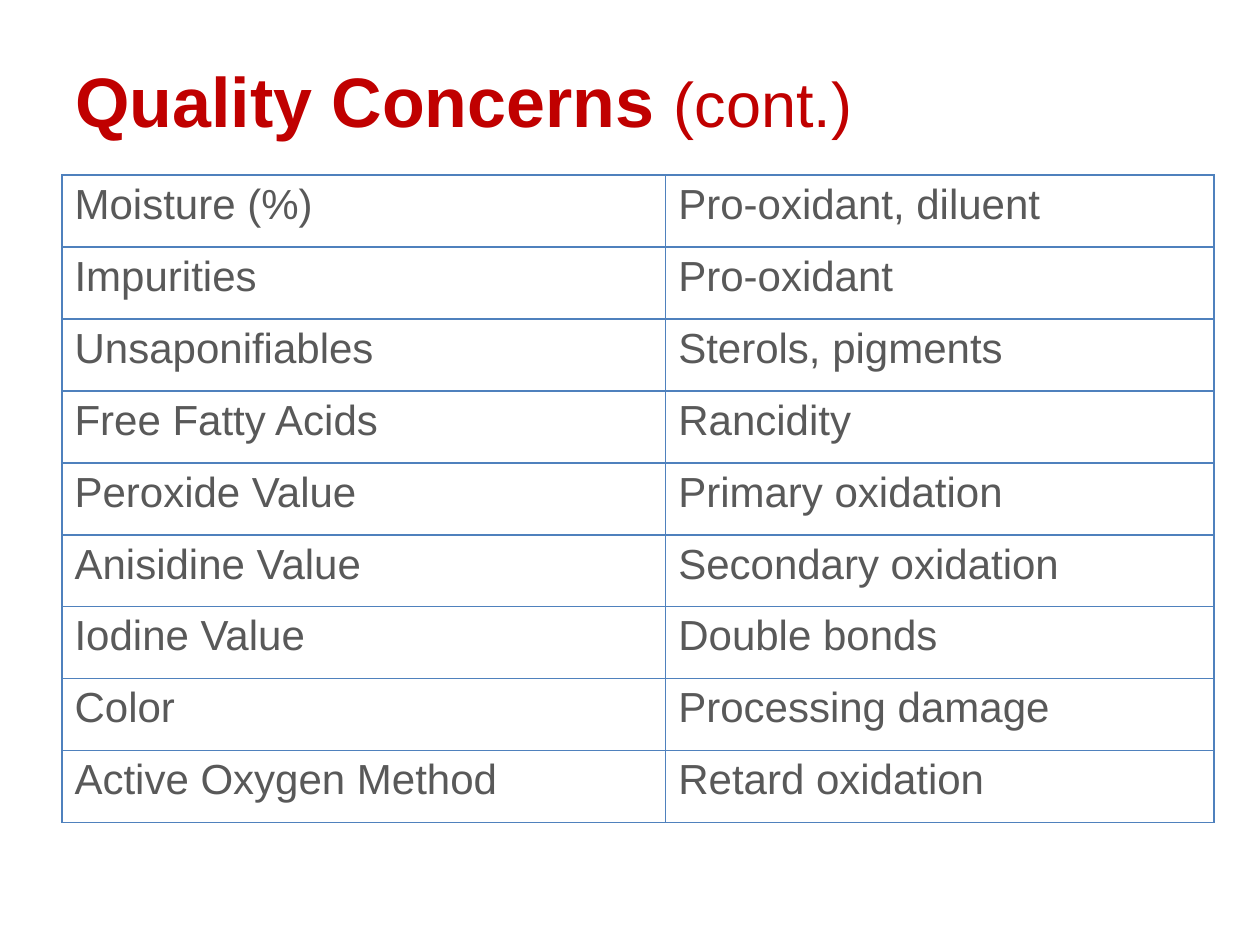
"""Build a slide that lists fat quality concerns in a two-column table."""
from lxml import etree
from pptx import Presentation
from pptx.dml.color import RGBColor
from pptx.enum.text import MSO_ANCHOR
from pptx.oxml.ns import qn
from pptx.util import Cm, Pt

BOTTOM = MSO_ANCHOR.BOTTOM
FONT = "Arial"
COLORS = {"title": "C00000", "text": "595959", "border": "4F81BD", "cell": "FFFFFF"}

TITLE_RUNS = [("Quality Concerns ", 40, True), ("(cont.)", 36, False)]
CONCERNS = [
    ("Moisture (%)", "Pro-oxidant, diluent"),
    ("Impurities", "Pro-oxidant"),
    ("Unsaponifiables", "Sterols, pigments"),
    ("Free Fatty Acids", "Rancidity"),
    ("Peroxide Value", "Primary oxidation"),
    ("Anisidine Value", "Secondary oxidation"),
    ("Iodine Value", "Double bonds"),
    ("Color", "Processing damage"),
    ("Active Oxygen Method", "Retard oxidation"),
]
COLUMN_WIDTHS = [12.17, 11.05]
ROW_HEIGHT = 1.45
BORDER_WIDTH = Pt(1)


def format_font(font, size, color, bold=False):
    font.name = FONT
    font.size = Pt(size)
    font.bold = bold
    font.color.rgb = RGBColor.from_string(COLORS[color])


def add_borders(cell):
    properties = cell._tc.get_or_add_tcPr()
    for index, side in enumerate(("a:lnL", "a:lnR", "a:lnT", "a:lnB")):
        line = etree.Element(qn(side), w=str(BORDER_WIDTH))
        fill = etree.SubElement(line, qn("a:solidFill"))
        etree.SubElement(fill, qn("a:srgbClr"), val=COLORS["border"])
        properties.insert(index, line)


def add_title(slide):
    text_frame = slide.shapes.add_textbox(Cm(1.27), Cm(0.64), Cm(24.33), Cm(2.34)).text_frame
    text_frame.word_wrap = True
    text_frame.vertical_anchor = BOTTOM
    for text, size, bold in TITLE_RUNS:
        run = text_frame.paragraphs[0].add_run()
        run.text = text
        format_font(run.font, size, "title", bold)


def add_concerns_table(slide):
    table = slide.shapes.add_table(
        len(CONCERNS), len(COLUMN_WIDTHS), Cm(1.25), Cm(3.53),
        Cm(sum(COLUMN_WIDTHS)), Cm(ROW_HEIGHT * len(CONCERNS)),
    ).table
    table.first_row = False
    table.horz_banding = False
    for column, width in zip(table.columns, COLUMN_WIDTHS):
        column.width = Cm(width)
    for row, texts in zip(table.rows, CONCERNS):
        row.height = Cm(ROW_HEIGHT)
        for cell, text in zip(row.cells, texts):
            cell.fill.solid()
            cell.fill.fore_color.rgb = RGBColor.from_string(COLORS["cell"])
            add_borders(cell)
            cell.text_frame.text = text
            format_font(cell.text_frame.paragraphs[0].runs[0].font, 24, "text")


def main():
    presentation = Presentation()
    presentation.slide_width, presentation.slide_height = Cm(25.4), Cm(19.05)
    slide = presentation.slides.add_slide(presentation.slide_layouts[6])
    add_title(slide)
    add_concerns_table(slide)
    presentation.save("out.pptx")


if __name__ == "__main__":
    main()
